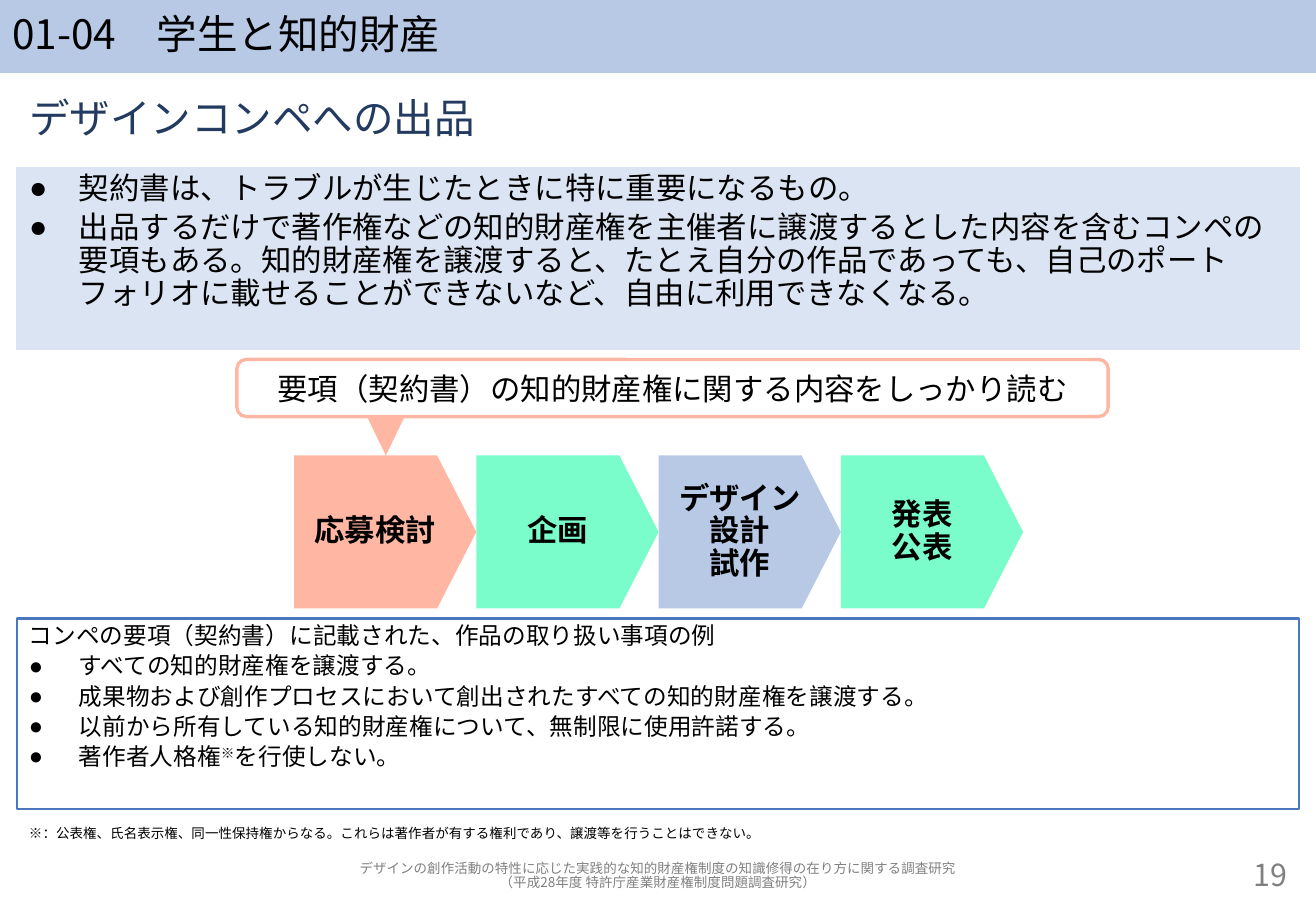
from lxml.etree import SubElement
from pptx import Presentation
from pptx.dml.color import RGBColor as RGB
from pptx.enum.shapes import MSO_SHAPE as SHAPE
from pptx.enum.text import MSO_ANCHOR as ANCHOR, MSO_AUTO_SIZE as AUTO, PP_ALIGN as ALIGN
from pptx.oxml.ns import qn
from pptx.util import Inches, Pt

COLORS = {
    "text": "000000",
    "heading": "233B61",
    "muted": "808080",
    "blue": "B7C9E5",
    "pale": "DBE4F2",
    "frame": "4B77BE",
    "salmon": "FFB7A3",
    "mint": "7BFCCB",
}
FONT = "Noto Sans CJK JP"
LEFT, WIDTH = 0.14, 10.55


def rgb(name):
    return RGB.from_string(COLORS[name])


def add_run(p, text, size, color, bold, raised):
    r = p.add_run()
    r.text = text
    r.font.name = FONT
    r.font.size = Pt(size)
    r.font.bold = bold
    r.font.color.rgb = rgb(color)
    props = r.font._element
    SubElement(props, qn("a:ea")).set("typeface", FONT)
    if raised:
        props.set("baseline", "30000")


def set_bullet(p, bulleted):
    props = p._p.get_or_add_pPr()
    indent = Inches(0.41) if bulleted else 0
    props.set("marL", str(indent))
    props.set("indent", str(-indent))
    if bulleted:
        SubElement(props, qn("a:buFont")).set("typeface", "Arial")
        SubElement(props, qn("a:buChar")).set("char", "●")
    else:
        SubElement(props, qn("a:buNone"))


def write_text(tf, text, size=18, color="text", bold=False, align=ALIGN.LEFT,
               anchor=ANCHOR.MIDDLE, spacing=0.9, before=0, bullets_from=None, raised=None):
    tf.word_wrap = True
    tf.auto_size = AUTO.NONE
    tf.vertical_anchor = anchor
    for i, line in enumerate(text.split("\n")):
        p = tf.paragraphs[0] if i == 0 else tf.add_paragraph()
        p.alignment = align
        p.line_spacing = spacing
        p.space_before = Pt(before * size)
        set_bullet(p, bullets_from is not None and i >= bullets_from)
        for part in line.partition(raised) if raised else [line]:
            if part:
                add_run(p, part, size, color, bold, part == raised)


class SlideBuilder:
    def __init__(self, prs):
        self.s = prs.slides.add_slide(prs.slide_layouts[3])

    def paint(self, sp, fill=None, line=None, weight=0.75):
        if fill:
            sp.fill.solid()
            sp.fill.fore_color.rgb = rgb(fill)
        else:
            sp.fill.background()
        if line:
            sp.line.color.rgb = rgb(line)
            sp.line.width = Pt(weight)
        else:
            sp.line.fill.background()

    def placeholder(self, idx, box, text, fill=None, line=None, **fmt):
        sp = self.s.placeholders[idx]
        sp.left, sp.top, sp.width, sp.height = map(Inches, box)
        self.paint(sp, fill, line)
        write_text(sp.text_frame, text, **fmt)

    def shape(self, kind, box, text="", fill=None, line=None, weight=0.75,
              adj=None, rotation=0, **fmt):
        sp = self.s.shapes.add_shape(kind, *map(Inches, box))
        sp.shadow.inherit = False
        sp.rotation = rotation
        if adj is not None:
            sp.adjustments[0] = adj
        self.paint(sp, fill, line, weight)
        if text:
            write_text(sp.text_frame, text, **fmt)

    def text(self, box, text, **fmt):
        sp = self.s.shapes.add_textbox(*map(Inches, box))
        write_text(sp.text_frame, text, **fmt)


def main():
    prs = Presentation()
    prs.slide_width, prs.slide_height = Inches(10.83), Inches(7.5)
    b = SlideBuilder(prs)

    b.placeholder(0, (0, 0, 10.83, 0.6), "01-04\u3000学生と知的財産".replace("\u3000", "　"),
                  fill="blue", size=24)
    b.placeholder(1, (LEFT, 1.38, WIDTH, 1.5),
                  "契約書は、トラブルが生じたときに特に重要になるもの。\n"
                  "出品するだけで著作権などの知的財産権を主催者に譲渡するとした内容を含むコンペの"
                  "要項もある。知的財産権を譲渡すると、たとえ自分の作品であっても、自己のポート"
                  "フォリオに載せることができないなど、自由に利用できなくなる。",
                  fill="pale", line="pale", anchor=ANCHOR.TOP, before=0.2, bullets_from=0)
    b.placeholder(2, (LEFT, 0.76, WIDTH, 0.47), "デザインコンペへの出品",
                  size=24, color="heading", anchor=ANCHOR.TOP, before=0.2)
    b.text((9.35, 7.06, 1.34, 0.31), "19", color="muted", align=ALIGN.RIGHT)

    steps = [
        ("応募検討", "salmon"),
        ("企画", "mint"),
        ("デザイン\n設計\n試作", "blue"),
        ("発表\n公表", "mint"),
    ]
    for i, (label, fill) in enumerate(steps):
        b.shape(SHAPE.PENTAGON, (2.42 + 1.5 * i, 3.75, 1.5, 1.26), label,
                fill=fill, adj=0.256, bold=True, align=ALIGN.CENTER)

    b.shape(SHAPE.ISOSCELES_TRIANGLE, (3.02, 3.43, 0.31, 0.32), fill="salmon", rotation=180)
    b.shape(SHAPE.ROUNDED_RECTANGLE, (1.95, 2.96, 7.17, 0.47),
            "要項（契約書）の知的財産権に関する内容をしっかり読む",
            line="salmon", weight=2, adj=0.164, align=ALIGN.CENTER, spacing=1.0)
    b.shape(SHAPE.RECTANGLE, (LEFT, 5.09, WIDTH, 1.57),
            "コンペの要項（契約書）に記載された、作品の取り扱い事項の例\n"
            "すべての知的財産権を譲渡する。\n"
            "成果物および創作プロセスにおいて創出されたすべての知的財産権を譲渡する。\n"
            "以前から所有している知的財産権について、無制限に使用許諾する。\n"
            "著作者人格権※を行使しない。",
            line="frame", weight=1.5, size=14, anchor=ANCHOR.TOP, before=0.2,
            bullets_from=1, raised="※")
    b.text((LEFT, 6.74, WIDTH, 0.24),
           "※：公表権、氏名表示権、同一性保持権からなる。"
           "これらは著作者が有する権利であり、譲渡等を行うことはできない。",
           size=8, spacing=1.0)
    b.text((LEFT, 7.06, WIDTH, 0.31),
           "デザインの創作活動の特性に応じた実践的な知的財産権制度の知識修得の在り方に関する調査研究\n"
           "（平成28年度 特許庁産業財産権制度問題調査研究）",
           size=8, color="muted", align=ALIGN.CENTER)
    prs.save("out.pptx")


if __name__ == "__main__":
    main()
